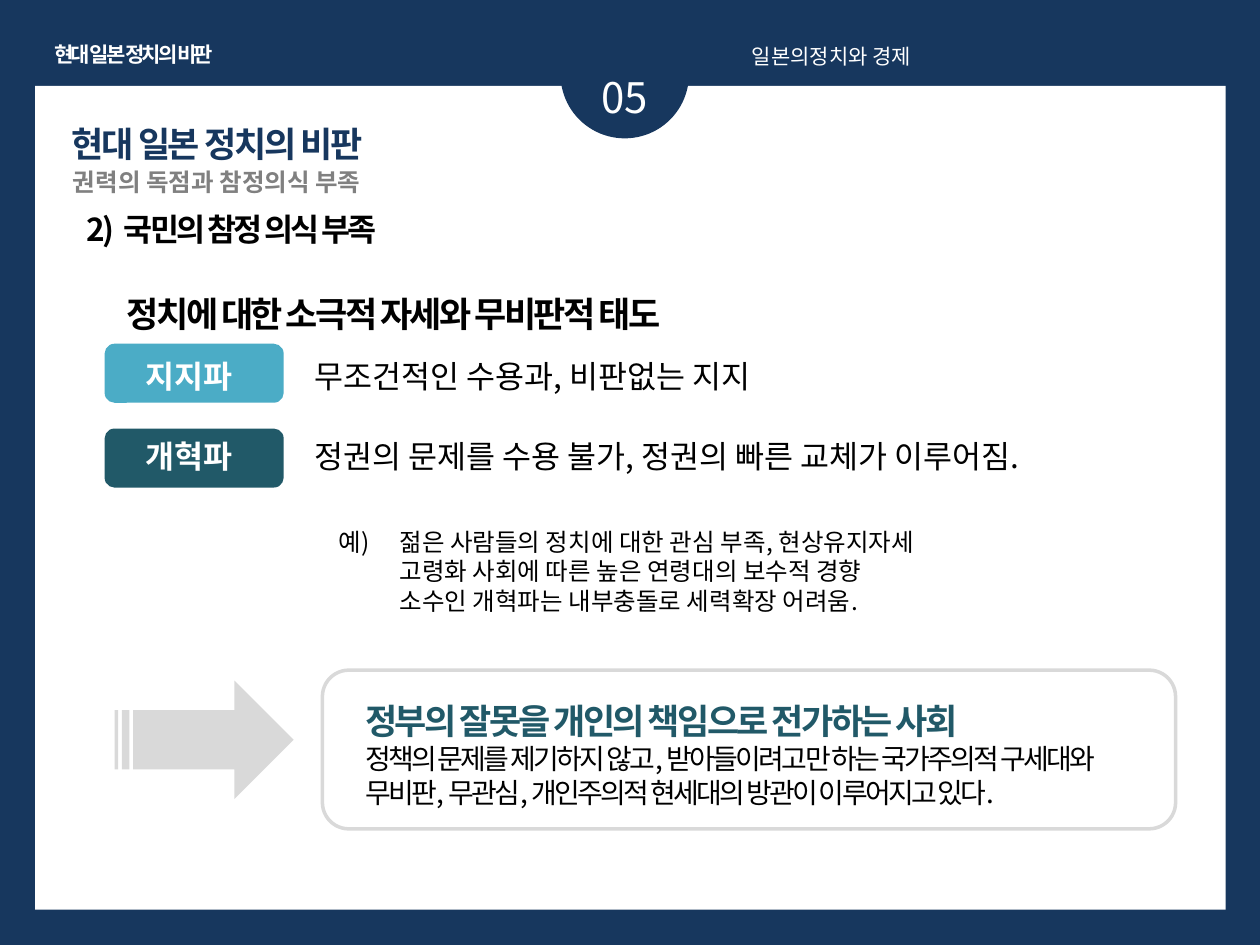
from dataclasses import dataclass

from lxml import etree
from pptx import Presentation, util as u
from pptx.dml.color import RGBColor
from pptx.enum import shapes, text
from pptx.oxml import ns

NAVY = RGBColor(0x17, 0x37, 0x5E)
TEAL = RGBColor(0x21, 0x59, 0x68)
AQUA = RGBColor(0x4B, 0xAC, 0xC6)
SILVER = RGBColor(0xD9, 0xD9, 0xD9)
GRAY = RGBColor(0x80, 0x80, 0x80)
BLACK = RGBColor(0, 0, 0)
WHITE = RGBColor(0xFF, 0xFF, 0xFF)
FONT = "Noto Sans CJK KR"
TIGHT = -150


@dataclass
class Area:
    left: float
    top: float
    width: float
    height: float

    def lengths(self) -> tuple:
        return tuple(u.Cm(n) for n in (self.left, self.top, self.width, self.height))


@dataclass
class Faction:
    name: str
    stance: str
    color: RGBColor
    pill_top: float
    text_top: float
    stance_width: float


FACTIONS = [
    Faction("지지파", "무조건적인 수용과, 비판없는 지지", AQUA, 6.93, 7.08, 11.81),
    Faction("개혁파", "정권의 문제를 수용 불가, 정권의 빠른 교체가 이루어짐.", TEAL, 8.64, 8.69, 16.99),
]
EXAMPLES = [
    "젊은 사람들의 정치에 대한 관심 부족, 현상유지자세",
    "고령화 사회에 따른 높은 연령대의 보수적 경향",
    "소수인 개혁파는 내부충돌로 세력확장 어려움.",
]


def add_figure(page, kind, area: Area, fill=None, line=None):
    figure = page.shapes.add_shape(kind, *area.lengths())
    figure.shadow.inherit = False
    if fill is None:
        figure.fill.background()
    else:
        figure.fill.solid()
        figure.fill.fore_color.rgb = fill
    if line is None:
        figure.line.fill.background()
    else:
        figure.line.color.rgb = line
        figure.line.width = u.Pt(2)
    return figure


def format_para(para, words: str, *, size=18, color=BLACK, bold=False, font=FONT,
                tracking=0, align=text.PP_ALIGN.LEFT, spacing=1.0):
    para.alignment = align
    para.line_spacing = spacing
    para.space_before = para.space_after = u.Pt(0)
    span = para.add_run()
    span.text = words
    span.font.size = u.Pt(size)
    span.font.bold = bold
    span.font.color.rgb = color
    span.font.name = font
    props = span.font._element
    etree.SubElement(props, ns.qn("a:ea"), typeface=font)
    if tracking:
        props.set("spc", str(tracking))


def prepare_frame(box, wrap=True):
    frame = box.text_frame
    frame.word_wrap = wrap
    frame.auto_size = text.MSO_AUTO_SIZE.NONE
    frame.vertical_anchor = text.MSO_ANCHOR.TOP
    return frame


def add_text(page, words: str, area: Area, wrap=True, **style):
    box = page.shapes.add_textbox(*area.lengths())
    frame = prepare_frame(box, wrap)
    format_para(frame.paragraphs[0], words, **style)
    return frame


def fill_placeholder(box, lines: list, area: Area, **style):
    box.left, box.top, box.width, box.height = area.lengths()
    frame = prepare_frame(box)
    for index, words in enumerate(lines):
        para = frame.add_paragraph() if index else frame.paragraphs[0]
        format_para(para, words, **style)
        props = para._p.get_or_add_pPr()
        props.set("marL", "0")
        props.set("indent", "0")
        etree.SubElement(props, ns.qn("a:buNone"))
    box.element.getparent().append(box.element)


def add_faction(page, faction: Faction):
    add_figure(page, shapes.MSO_SHAPE.ROUNDED_RECTANGLE,
               Area(2.11, faction.pill_top, 3.61, 1.19), faction.color)
    add_text(page, faction.name, Area(2.69, faction.text_top, 2.59, 1.02),
             color=WHITE, bold=True)
    add_text(page, faction.stance, Area(6.1, faction.text_top, faction.stance_width, 1.02))


def add_header(page):
    add_figure(page, shapes.MSO_SHAPE.RECTANGLE, Area(0.71, 1.73, 24, 16.61), WHITE)
    add_figure(page, shapes.MSO_SHAPE.OVAL, Area(11.3, 0.2, 2.59, 2.59), NAVY)
    add_text(page, "05", Area(11.1, 1.32, 3, 1.27), size=24, color=WHITE,
             align=text.PP_ALIGN.CENTER)
    add_text(page, "현대 일본 정치의 비판", Area(0.61, 0.71, 4.17, 0.76), wrap=False,
             size=12, color=WHITE, bold=True, tracking=TIGHT, align=text.PP_ALIGN.CENTER)
    add_text(page, "일본의정치와 경제", Area(14.91, 0.76, 10.01, 0.76), size=12,
             color=WHITE, align=text.PP_ALIGN.JUSTIFY)


def add_conclusion(page):
    add_figure(page, shapes.MSO_SHAPE.STRIPED_RIGHT_ARROW, Area(2.31, 13.72, 3.61, 2.39), SILVER)
    add_figure(page, shapes.MSO_SHAPE.ROUNDED_RECTANGLE, Area(6.5, 13.51, 17.2, 3.2), line=SILVER)
    frame = add_text(page, "정부의 잘못을 개인의 책임으로 전가하는 사회", Area(7.11, 13.13, 16, 3.33),
                     size=20, color=TEAL, bold=True, tracking=TIGHT, spacing=2.0)
    format_para(frame.add_paragraph(),
                "정책의 문제를 제기하지 않고, 받아들이려고만 하는 국가주의적 구세대와 "
                "무비판, 무관심, 개인주의적 현세대의 방관이 이루어지고 있다.",
                size=16, tracking=TIGHT)


def main():
    deck = Presentation()
    deck.slide_width, deck.slide_height = u.Cm(25.4), u.Cm(19.05)
    page = deck.slides.add_slide(deck.slide_layouts[1])
    page.background.fill.solid()
    page.background.fill.fore_color.rgb = NAVY

    add_header(page)
    fill_placeholder(page.shapes.title, ["현대 일본 정치의 비판"], Area(1.19, 2.34, 7.52, 2.13),
                     size=20, color=NAVY, bold=True, font="Arial", tracking=TIGHT)
    add_text(page, "권력의 독점과 참정의식 부족", Area(1.22, 3.25, 8.99, 0.86),
             size=14, color=GRAY, bold=True)
    add_text(page, "2)  국민의 참정 의식 부족", Area(1.5, 4.11, 18.8, 1.02),
             bold=True, tracking=TIGHT)
    add_text(page, "정치에 대한 소극적 자세와 무비판적 태도", Area(2.31, 4.93, 21.59, 1.7),
             size=20, bold=True, tracking=TIGHT, spacing=2.0)
    for faction in FACTIONS:
        add_faction(page, faction)
    add_text(page, "예)", Area(6.58, 10.49, 1.8, 0.86), size=14, tracking=TIGHT)
    fill_placeholder(page.placeholders[1], EXAMPLES, Area(7.8, 10.49, 13.59, 2.06), size=14)
    add_conclusion(page)
    deck.save("out.pptx")


if __name__ == "__main__":
    main()
